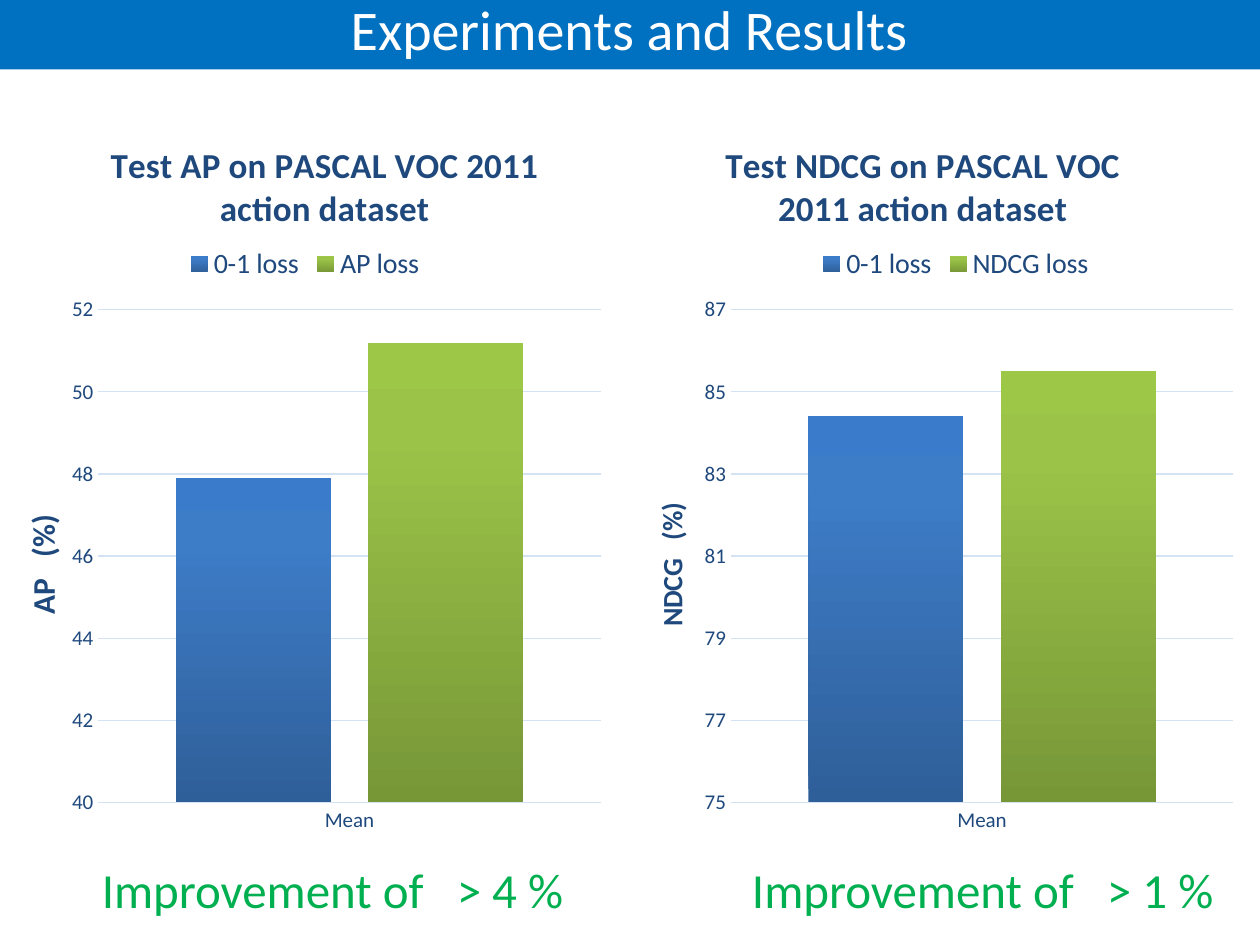
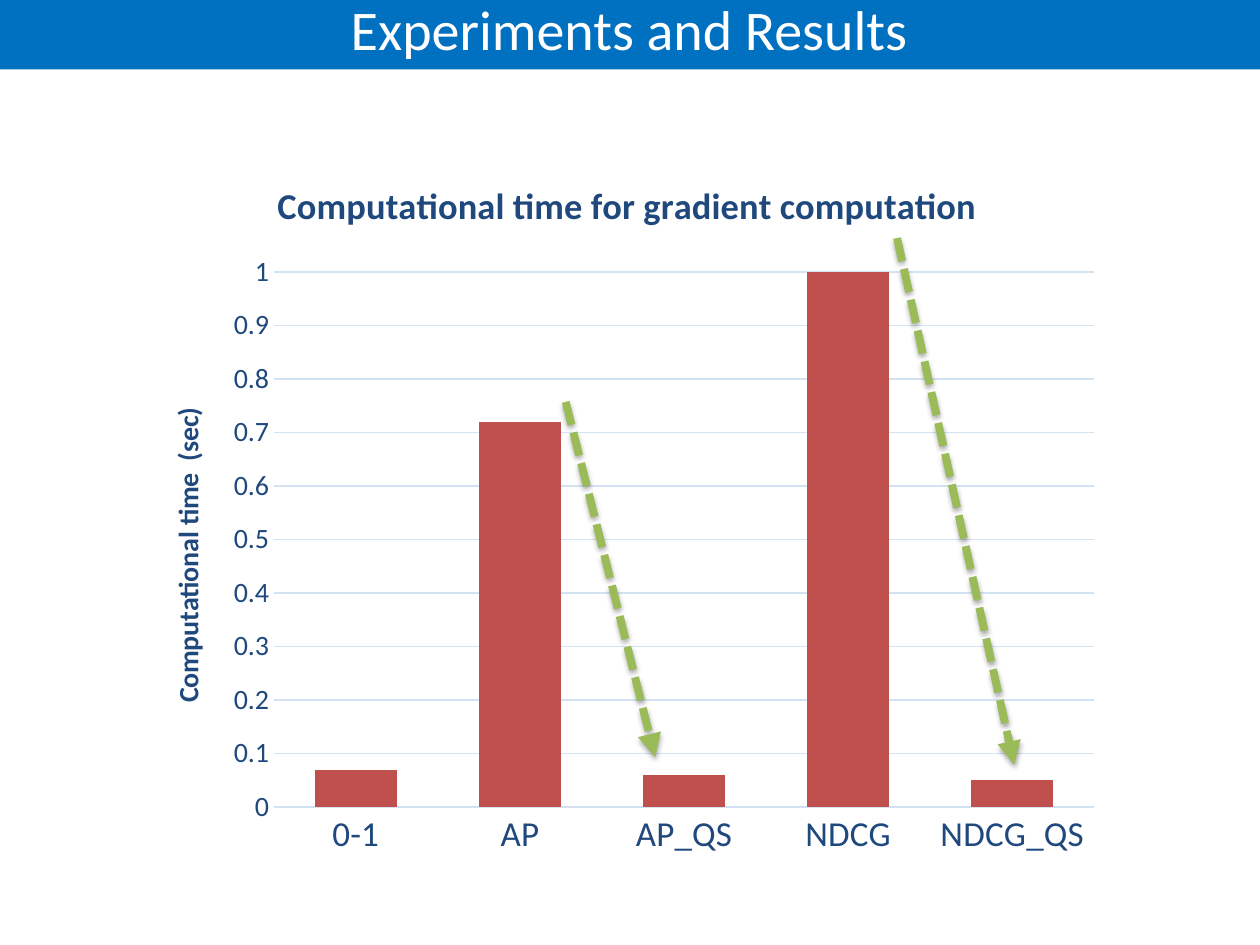
from pptx import Presentation
from pptx.chart.data import CategoryChartData
from pptx.dml.color import RGBColor
from pptx.enum.chart import XL_CHART_TYPE, XL_LEGEND_POSITION, XL_TICK_MARK
from pptx.enum.dml import MSO_LINE
from pptx.enum.shapes import MSO_CONNECTOR, MSO_SHAPE
from pptx.enum.text import MSO_ANCHOR, PP_ALIGN
from pptx.oxml import parse_xml
from pptx.oxml.ns import nsdecls, qn
from pptx.util import Inches, Pt

HEX = {"band": "0070C0", "white": "FFFFFF", "ink": "1F497D", "grid": "D4E3F4",
       "gain": "00B050", "red": "C0504D", "arrow": "9BBB59"}
COLOR = {name: RGBColor.from_string(value) for name, value in HEX.items()}
BLUE = ("2F5F99", "3D7CC7", "3A7CCB")
GREEN = ("779737", "9BC348", "9DC746")
FONT = "Calibri"

prs = Presentation()
prs.slide_width, prs.slide_height = Inches(10), Inches(7.5)
title_only = prs.slide_layouts[5]


def set_layout(parent, index, inner=False, **shares):
    """Place a chart part by shares of the chart's size."""
    for old in parent.findall(qn("c:layout")):
        parent.remove(old)
    target = '<c:layoutTarget val="inner"/>' if inner else ""
    modes = "".join(f'<c:{key}Mode val="edge"/>' for key in "xy")
    values = "".join(f'<c:{key} val="{value}"/>' for key, value in shares.items())
    parent.insert(index, parse_xml(
        f'<c:layout {nsdecls("c")}><c:manualLayout>{target}{modes}{values}'
        '</c:manualLayout></c:layout>'))


def add_columns(s, box, title, title_size, title_at, axis_title, axis_size,
                label_sizes, scale, plot, cats, series):
    data = CategoryChartData()
    data.categories = cats
    for name, values, fill in series:
        data.add_series(name, values)
    chart = s.shapes.add_chart(XL_CHART_TYPE.COLUMN_CLUSTERED,
                               *[Inches(v) for v in box], data).chart
    chart.font.name, chart.font.size = FONT, Pt(10)
    chart.font.color.rgb = COLOR["ink"]

    # Titles
    category, value = chart.category_axis, chart.value_axis
    for owner, text, size in ((chart.chart_title, title, title_size),
                              (value.axis_title, axis_title, axis_size)):
        owner.text_frame.text = text
        font = owner.text_frame.paragraphs[0].font
        font.name, font.size, font.bold = FONT, Pt(size), True
        font.color.rgb = COLOR["ink"]
    set_layout(chart.chart_title._element, 1, x=title_at[0], y=title_at[1])

    # Axes and grid
    for axis, size in zip((category, value), label_sizes):
        axis.major_tick_mark = axis.minor_tick_mark = XL_TICK_MARK.NONE
        font = axis.tick_labels.font
        font.name, font.size = FONT, Pt(size)
        font.color.rgb = COLOR["ink"]
    value.minimum_scale, value.maximum_scale, value.major_unit = scale
    value.format.line.fill.background()
    for line in (category.format.line, value.major_gridlines.format.line):
        line.color.rgb, line.width = COLOR["grid"], Pt(0.75)
    x, y, w, h = plot
    set_layout(chart._chartSpace.chart.plotArea, 0, inner=True, x=x, y=y, w=w, h=h)

    # Columns
    columns = chart.plots[0]
    columns.gap_width, columns.overlap = 100, -24
    columns.vary_by_categories = False
    for column, (name, values, fill) in zip(columns.series, series):
        column.invert_if_negative = False
        if isinstance(fill, RGBColor):
            column.format.fill.solid()
            column.format.fill.fore_color.rgb = fill
        else:
            stops = "".join(f'<a:gs pos="{pos}000"><a:srgbClr val="{rgb}"/></a:gs>'
                            for pos, rgb in zip((0, 80, 100), fill))
            column._element.get_or_add_spPr().append(parse_xml(
                f'<a:gradFill {nsdecls("a")}><a:gsLst>{stops}</a:gsLst>'
                '<a:lin ang="16200000" scaled="0"/></a:gradFill>'))

    # Legend, where there is more than one series
    chart.has_legend = len(series) > 1
    if chart.has_legend:
        legend = chart.legend
        legend.position, legend.include_in_layout = XL_LEGEND_POSITION.TOP, False
        legend.font.name, legend.font.size = FONT, Pt(16)
        legend.font.color.rgb = COLOR["ink"]
        set_layout(legend._element, 1, x=0.28, y=0.15)


# Both slides: title on a blue band
slides = [prs.slides.add_slide(title_only) for _ in range(2)]
for s in slides:
    sp = s.shapes.title
    sp.left, sp.top, sp.width, sp.height = [Inches(v) for v in (2.68, -0.1, 4.63, 0.64)]
    tf = sp.text_frame
    tf.text, tf.vertical_anchor, tf.word_wrap = "Experiments and Results", MSO_ANCHOR.MIDDLE, True
    p = tf.paragraphs[0]
    p.alignment = PP_ALIGN.CENTER
    p.font.name, p.font.size = FONT, Pt(32)
    p.font.color.rgb = COLOR["white"]

# The band belongs to the shared layout
band = slides[0].shapes.add_shape(MSO_SHAPE.RECTANGLE, 0, Inches(-0.03),
                                  prs.slide_width, Inches(0.58))
band.shadow.inherit = False
band.fill.solid()
band.fill.fore_color.rgb = COLOR["band"]
band.line.fill.background()
title_only.shapes._spTree.insert(2, band._element)

# Slide 1: accuracy, one chart per measure with its gain below
s = slides[0]
measures = [
    ("AP", 0.12, 18, (0.15, 0), 40, (47.9, 51.2), 0.71, 4),
    ("NDCG", 5.14, 16, (0.12, 0), 75, (84.4, 85.5), 5.87, 1),
]
for name, left, size, title_at, low, (base, tuned), gain_left, gain in measures:
    add_columns(s, (left, 1.06, 4.72, 5.71),
                f"Test {name} on PASCAL VOC 2011 action dataset", 20, title_at,
                f"{name}   (%)", size, (12, 12), (low, low + 12, 2),
                (0.14, 0.245, 0.845, 0.685), ["Mean"],
                [("0-1 loss", [base], BLUE), (f"{name} loss", [tuned], GREEN)])
    tf = s.shapes.add_textbox(Inches(gain_left), Inches(6.77),
                              Inches(3.94), Inches(0.57)).text_frame
    tf.word_wrap = True
    tf.text = f"Improvement of   > {gain} %"
    p = tf.paragraphs[0]
    p.font.name, p.font.size = FONT, Pt(28)
    p.font.color.rgb = COLOR["gain"]

# Slide 2: computation time per method
s = slides[1]
time_label = "Computational time  (sec)"
add_columns(s, (1.15, 1.2, 7.69, 5.71),
            "Computational time for gradient computation", 20.8, (0.13, 0.03),
            time_label, 16, (20, 16), (0, 1, 0.1),
            (0.133, 0.168, 0.847, 0.744),
            ["0-1", "AP", "AP_QS", "NDCG", "NDCG_QS"],
            [(time_label, (0.07, 0.72, 0.06, 1, 0.05), COLOR["red"])])

# Arrows from each slow method to its quick version
for ends in ((4.49, 3.19, 5.2, 6.01), (7.12, 1.89, 8.05, 6.07)):
    arrow = s.shapes.add_connector(MSO_CONNECTOR.STRAIGHT, *[Inches(v) for v in ends])
    arrow.line.color.rgb, arrow.line.width = COLOR["arrow"], Pt(4.5)
    arrow.line.dash_style = MSO_LINE.SQUARE_DOT
    arrow.line._get_or_add_ln().append(
        parse_xml(f'<a:tailEnd {nsdecls("a")} type="triangle"/>'))
    arrow._element.spPr.append(parse_xml(
        f'<a:effectLst {nsdecls("a")}><a:outerShdw blurRad="{Pt(3.1)}" dist="{Pt(1.8)}" '
        'dir="5400000" rotWithShape="0"><a:srgbClr val="000000"><a:alpha val="35000"/>'
        '</a:srgbClr></a:outerShdw></a:effectLst>'))

prs.save("out.pptx")
